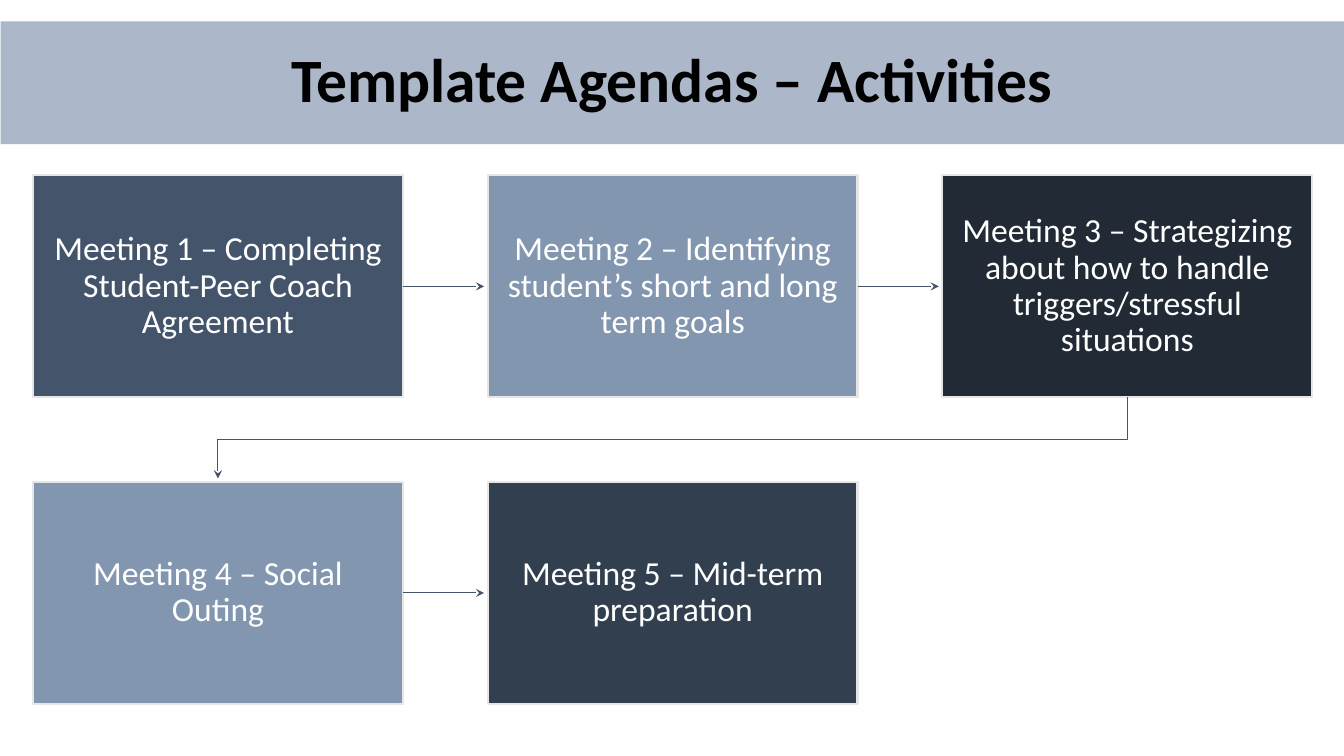
from lxml import etree
from pptx import Presentation
from pptx.dml.color import RGBColor
from pptx.enum import shapes, text
from pptx.oxml import ns
from pptx.util import Pt

# Content: wording and fill of each meeting, in order
TITLE = "Template Agendas – Activities"
MEETINGS = [
    ("Meeting 1 – Completing Student-Peer Coach Agreement", "44546A"),
    ("Meeting 2 – Identifying student’s short and long term goals", "8296B0"),
    ("Meeting 3 – Strategizing about how to handle triggers/stressful situations", "222A35"),
    ("Meeting 4 – Social Outing", "8296B0"),
    ("Meeting 5 – Mid-term preparation", "323F4F"),
]

THEME = {
    "font": "Calibri", "title_size": 44, "meeting_size": 24,
    "title": "000000", "meeting": "FFFFFF",
    "banner": "ACB8CA", "border": "E7E6E6", "arrow": "44546A",
    "border_width": 1.5, "arrow_width": 0.75, "line_spacing": 0.9,
}

# Layout, in points
SLIDE_W, SLIDE_H = 960, 540
BANNER = (0.5, 15.2, 960, 87.8)
TITLE_BOX = (149, 26.6, 662.4, 64.8)
COLUMNS = 3
GRID_LEFT, GRID_TOP = 23.6, 125.3
BOX_W, BOX_H = 264.2, 158.5
PITCH_X, PITCH_Y = 324.8, 219
ARROW_GAP = 2.6
TURN_DROP = 30


def rgb(name):
    return RGBColor.from_string(THEME[name])


def points(*values):
    return [Pt(value) for value in values]


def write(shape, wording, role, insets, bold=False):
    frame = shape.text_frame
    frame.word_wrap = True
    frame.vertical_anchor = text.MSO_ANCHOR.MIDDLE
    frame.margin_left = frame.margin_right = Pt(insets[0])
    frame.margin_top = frame.margin_bottom = Pt(insets[1])
    paragraph = frame.paragraphs[0]
    paragraph.alignment = text.PP_ALIGN.CENTER
    paragraph.line_spacing = THEME["line_spacing"]
    run = paragraph.add_run()
    run.text = wording
    run.font.name = THEME["font"]
    run.font.size = Pt(THEME[role + "_size"])
    run.font.bold = bold
    run.font.color.rgb = rgb(role)


def add_block(place, fill):
    block = slide.shapes.add_shape(shapes.MSO_SHAPE.RECTANGLE, *points(*place))
    block.shadow.inherit = False
    block.fill.solid()
    block.fill.fore_color.rgb = RGBColor.from_string(fill)
    block.line.fill.background()
    return block


def style_arrow(arrow):
    arrow.line.color.rgb = rgb("arrow")
    arrow.line.width = Pt(THEME["arrow_width"])
    line = arrow.line._get_or_add_ln()
    etree.SubElement(line, ns.qn("a:tailEnd"), type="stealth")


deck = Presentation()
deck.slide_width, deck.slide_height = points(SLIDE_W, SLIDE_H)
slide = deck.slides.add_slide(deck.slide_layouts[6])

# Banner and title
add_block(BANNER, THEME["banner"])
heading = slide.shapes.add_textbox(*points(*TITLE_BOX))
write(heading, TITLE, "title", (7.2, 3.6), bold=True)

# Meeting boxes, filled row by row
corners = [
    (GRID_LEFT + i % COLUMNS * PITCH_X, GRID_TOP + i // COLUMNS * PITCH_Y)
    for i in range(len(MEETINGS))
]
boxes = []
for (wording, fill), corner in zip(MEETINGS, corners):
    box = add_block((*corner, BOX_W, BOX_H), fill)
    box.line.color.rgb = rgb("border")
    box.line.width = Pt(THEME["border_width"])
    write(box, wording, "meeting", (12.95, 13.6))
    boxes.append(box)

# Arrows: straight within a row, bent where the flow starts a new row
for box, (left, top), (next_left, next_top) in zip(boxes, corners, corners[1:]):
    if top == next_top:
        middle = top + BOX_H / 2
        arrow = slide.shapes.add_connector(
            shapes.MSO_CONNECTOR.STRAIGHT,
            *points(left + BOX_W, middle, next_left - ARROW_GAP, middle))
        arrow.begin_connect(box, 3)
        style_arrow(arrow)
        etree.SubElement(arrow._element.spPr, ns.qn("a:effectLst"))
    else:
        start_x, end_x = left + BOX_W / 2, next_left + BOX_W / 2
        bottom = top + BOX_H
        turn = bottom + TURN_DROP
        route = slide.shapes.build_freeform(*points(start_x, bottom))
        route.add_line_segments(
            [points(start_x, turn), points(end_x, turn),
             points(end_x, next_top - ARROW_GAP)], close=False)
        arrow = route.convert_to_shape()
        arrow.shadow.inherit = False
        arrow.fill.background()
        style_arrow(arrow)

deck.save("out.pptx")
